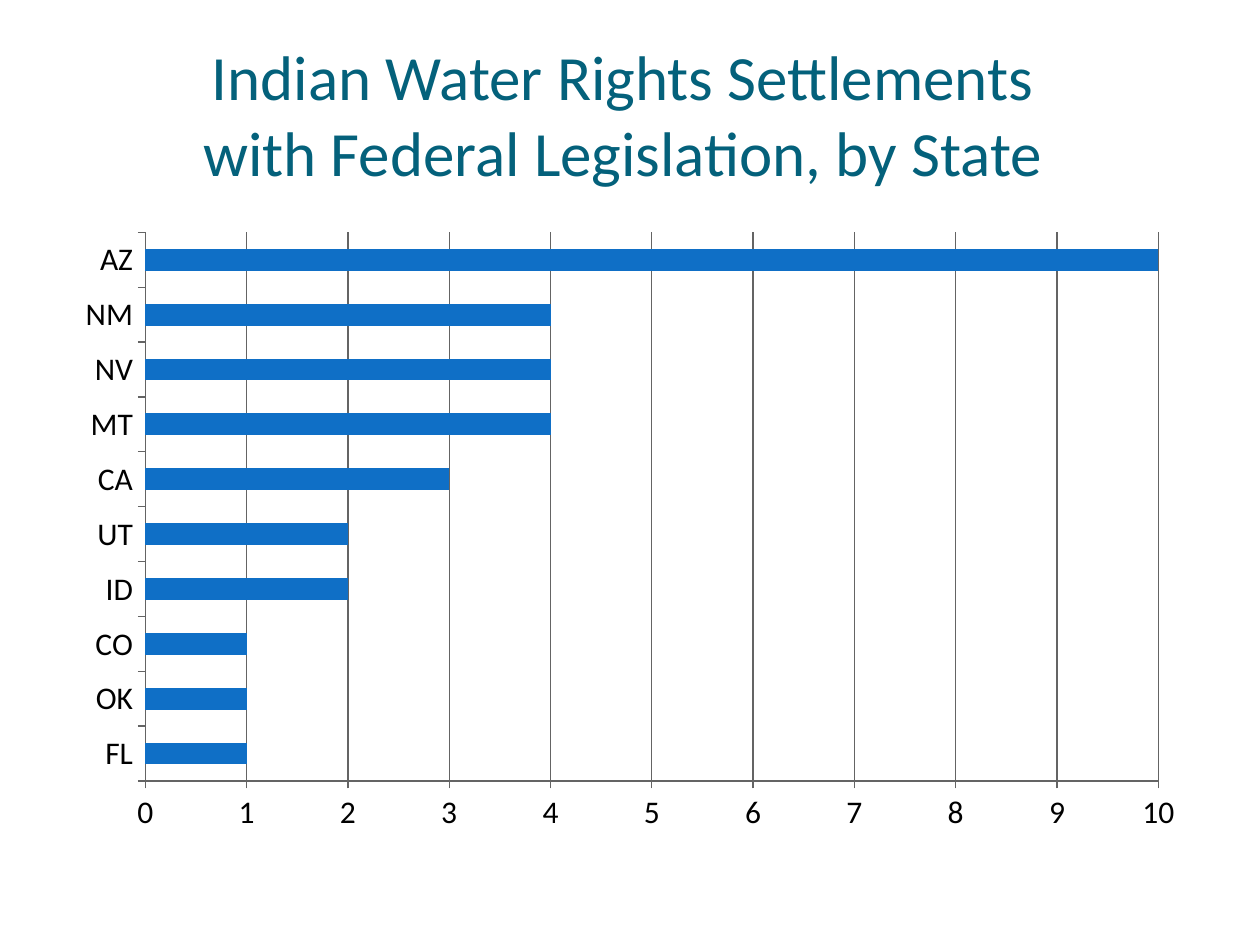
import pptx
import pptx.util
import pptx.chart.data
import pptx.dml.color
import pptx.enum.chart
import pptx.enum.text

PX_PER_INCH = 126
FONT = "Calibri"
SETTLEMENTS = {"FL": 1, "OK": 1, "CO": 1, "ID": 2, "UT": 2,
               "CA": 3, "MT": 4, "NV": 4, "NM": 4, "AZ": 10}


def px(length):
    return pptx.util.Emu(round(length * 914400 / PX_PER_INCH))


def color(hex_value):
    return pptx.dml.color.RGBColor.from_string(hex_value)


def style_font(font, size, hex_value):
    font.name = FONT
    font.size = pptx.util.Pt(size)
    font.color.rgb = color(hex_value)


def place_title(slide, left, top, width, height):
    title = slide.shapes.title
    title.left, title.top, title.width, title.height = map(px, (left, top, width, height))
    frame = title.text_frame
    frame.text = "Indian Water Rights Settlements \vwith Federal Legislation, by State "
    frame.word_wrap = True
    frame.auto_size = pptx.enum.text.MSO_AUTO_SIZE.NONE
    frame.vertical_anchor = pptx.enum.text.MSO_ANCHOR.BOTTOM
    frame.margin_left = frame.margin_right = frame.margin_bottom = 0
    frame.margin_top = pptx.util.Inches(0.05)
    heading = frame.paragraphs[0]
    heading.alignment = pptx.enum.text.PP_ALIGN.CENTER
    style_font(heading.font, 36, "04617B")


def place_state_chart(slide, left, top, width, height):
    counts = pptx.chart.data.CategoryChartData()
    counts.categories = list(SETTLEMENTS)
    counts.add_series("Series 1", list(SETTLEMENTS.values()))
    chart = slide.shapes.add_chart(
        pptx.enum.chart.XL_CHART_TYPE.BAR_CLUSTERED,
        *map(px, (left, top, width, height)), counts).chart
    chart.has_legend = False
    chart.has_title = False
    style_font(chart.font, 18, "000000")

    # Bars
    plot = chart.plots[0]
    plot.gap_width = 150
    plot.vary_by_categories = False
    bars = plot.series[0].format.fill
    bars.solid()
    bars.fore_color.rgb = color("0F6FC6")

    # Axes and gridlines
    states, totals = chart.category_axis, chart.value_axis
    states.has_major_gridlines = False
    totals.has_major_gridlines = True
    totals.minimum_scale, totals.maximum_scale, totals.major_unit = 0, 10, 1
    totals.tick_labels.number_format = "#,##0"
    totals.tick_labels.number_format_is_linked = False
    for axis in (states, totals):
        axis.major_tick_mark = pptx.enum.chart.XL_TICK_MARK.OUTSIDE
        style_font(axis.tick_labels.font, 18, "000000")
    for rule in (states.format.line, totals.format.line,
                 totals.major_gridlines.format.line):
        rule.color.rgb = color("646464")
        rule.width = pptx.util.Pt(0.75)


def main():
    deck = pptx.Presentation()
    deck.slide_width, deck.slide_height = px(1260), px(945)
    slide = deck.slides.add_slide(deck.slide_layouts[5])
    slide.background.fill.solid()
    slide.background.fill.fore_color.rgb = color("FFFFFF")
    place_title(slide, 63, 32, 1134, 157)
    place_state_chart(slide, 63, 220, 1134, 624)
    deck.save("out.pptx")


if __name__ == "__main__":
    main()
